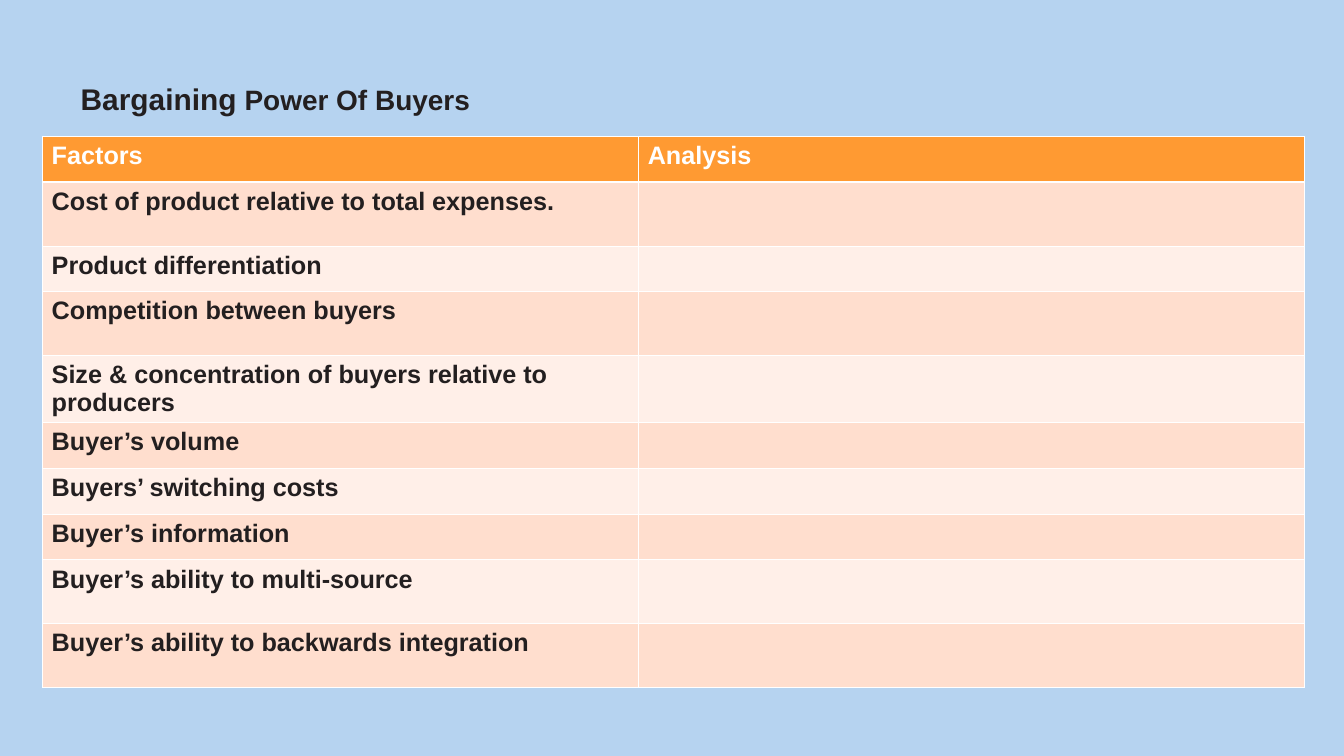
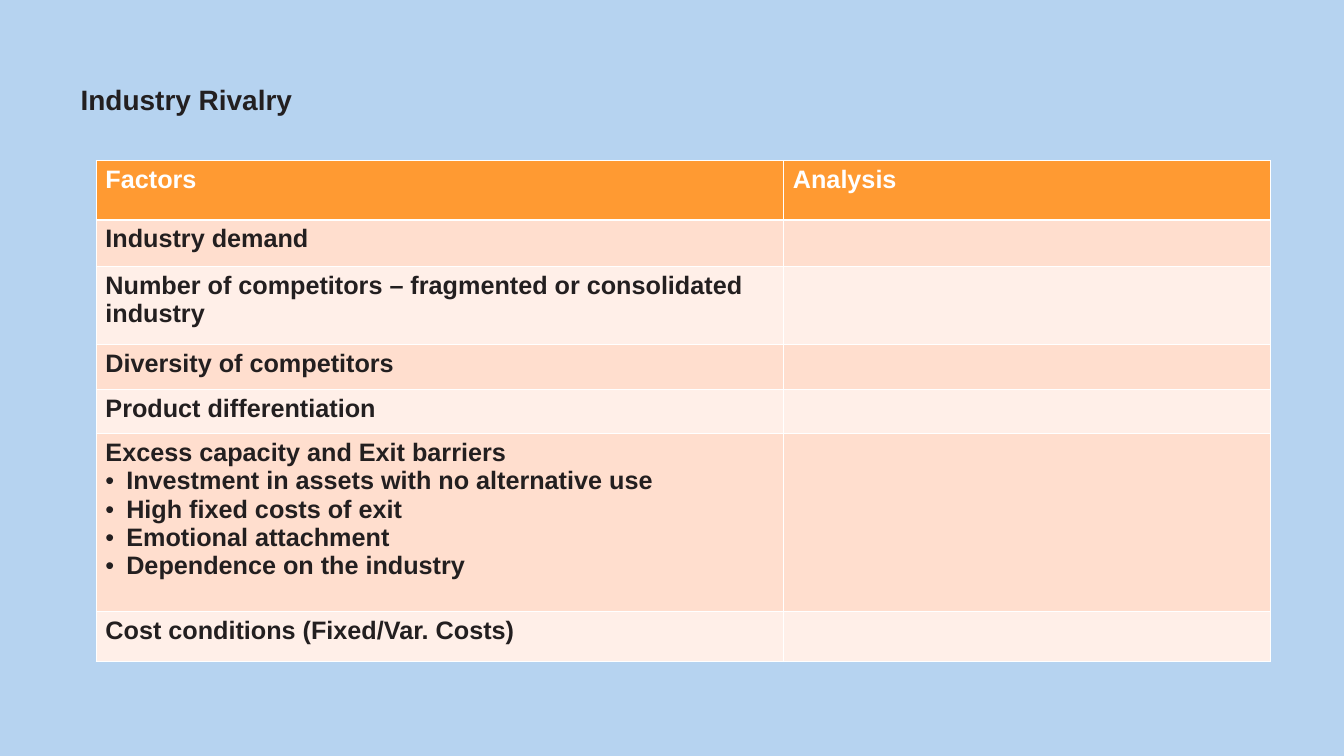
from dataclasses import dataclass

from lxml import etree
from pptx import Presentation
from pptx.dml.color import RGBColor
from pptx.enum.text import MSO_ANCHOR, MSO_AUTO_SIZE, PP_ALIGN
from pptx.oxml.ns import qn
from pptx.util import Inches, Pt

LEFT = PP_ALIGN.LEFT
BOTTOM = MSO_ANCHOR.BOTTOM
NO_AUTOFIT = MSO_AUTO_SIZE.NONE

FONT = "Arial"
SKY = "B6D3F0"
INK = "231F20"
WHITE = "FFFFFF"
ORANGE = "FF9A32"
BANDS = ("FFDECE", "FFEFE8")
TITLE_SIZE = 30
TABLE_SIZE = 27
THIN, THICK = 1, 3
BULLET_INDENT = Inches(0.31)


@dataclass(frozen=True)
class TitlePart:
    text: str
    size: float = TITLE_SIZE


@dataclass(frozen=True)
class FactorRow:
    factor: str
    height: float
    bullets: tuple[str, ...] = ()


@dataclass(frozen=True)
class FactorSlide:
    title: tuple[TitlePart, ...]
    left: float
    top: float
    column_widths: tuple[float, float]
    header_height: float
    rows: tuple[FactorRow, ...]


SLIDES = (
    FactorSlide(
        (TitlePart("Bargaining", 32), TitlePart(" Power Of Buyers")),
        0.63, 2.03, (8.87, 9.91), 0.68,
        (
            FactorRow("Cost of product relative to total expenses.", 0.95),
            FactorRow("Product differentiation", 0.68),
            FactorRow("Competition between buyers", 0.95),
            FactorRow("Size & concentration of buyers relative to producers", 0.83),
            FactorRow("Buyer’s volume", 0.68),
            FactorRow("Buyers’ switching costs", 0.68),
            FactorRow("Buyer’s information", 0.68),
            FactorRow("Buyer’s ability to multi-source", 0.95),
            FactorRow("Buyer’s ability to backwards integration", 0.95),
        ),
    ),
    FactorSlide(
        (TitlePart("Industry Rivalry"),),
        1.43, 2.39, (10.23, 7.25), 0.88,
        (
            FactorRow("Industry demand", 0.69),
            FactorRow("Number of competitors – fragmented or consolidated industry", 1.16),
            FactorRow("Diversity of competitors", 0.67),
            FactorRow("Product differentiation", 0.66),
            FactorRow(
                "Excess capacity and Exit barriers", 2.65,
                (
                    "Investment in assets with no alternative use",
                    "High fixed costs of exit",
                    "Emotional attachment",
                    "Dependence on the industry",
                ),
            ),
            FactorRow("Cost conditions (Fixed/Var. Costs)", 0.75),
        ),
    ),
)


def rgb(color: str) -> RGBColor:
    return RGBColor.from_string(color)


def set_font(font, color: str) -> None:
    font.name = FONT
    font.bold = True
    font.color.rgb = rgb(color)


def add_bullet(paragraph) -> None:
    properties = paragraph._p.get_or_add_pPr()
    properties.set("marL", str(BULLET_INDENT))
    properties.set("indent", str(-BULLET_INDENT))
    etree.SubElement(properties, qn("a:buFont")).set("typeface", FONT)
    etree.SubElement(properties, qn("a:buChar")).set("char", "•")


def set_borders(cell, top: float, bottom: float) -> None:
    properties = cell._tc.get_or_add_tcPr()
    widths = {"a:lnL": THIN, "a:lnR": THIN, "a:lnT": top, "a:lnB": bottom}
    for position, (tag, width) in enumerate(widths.items()):
        line = etree.Element(qn(tag), w=str(Pt(width)))
        fill = etree.SubElement(line, qn("a:solidFill"))
        etree.SubElement(fill, qn("a:srgbClr")).set("val", WHITE)
        properties.insert(position, line)


def fill_cell(cell, lines: tuple[str, ...], fill: str, color: str) -> None:
    cell.fill.solid()
    cell.fill.fore_color.rgb = rgb(fill)
    cell.margin_left = cell.margin_right = Inches(0.14)
    cell.margin_top = cell.margin_bottom = Inches(0.08)
    frame = cell.text_frame
    for index, text in enumerate(lines):
        paragraph = frame.add_paragraph() if index else frame.paragraphs[0]
        paragraph.text = text
        if index:
            add_bullet(paragraph)
        set_font(paragraph.font, color)
        paragraph.font.size = Pt(TABLE_SIZE)


def add_title(slide, parts: tuple[TitlePart, ...]) -> None:
    title = slide.shapes.title
    title.left, title.top = Inches(1.1), Inches(1.17)
    title.width, title.height = Inches(17.81), Inches(0.62)
    frame = title.text_frame
    frame.auto_size = NO_AUTOFIT
    frame.vertical_anchor = BOTTOM
    paragraph = frame.paragraphs[0]
    paragraph.alignment = LEFT
    paragraph.line_spacing = 0.9
    set_font(paragraph.font, INK)
    for part in parts:
        run = paragraph.add_run()
        run.text = part.text
        run.font.size = Pt(part.size)


def add_factor_table(slide, content: FactorSlide) -> None:
    heights = [content.header_height] + [row.height for row in content.rows]
    table = slide.shapes.add_table(
        len(heights), len(content.column_widths),
        Inches(content.left), Inches(content.top),
        Inches(sum(content.column_widths)), Inches(sum(heights)),
    ).table
    for column, width in zip(table.columns, content.column_widths):
        column.width = Inches(width)
    for row, height in zip(table.rows, heights):
        row.height = Inches(height)

    for cell, heading in zip(table.rows[0].cells, ("Factors", "Analysis")):
        fill_cell(cell, (heading,), ORANGE, WHITE)
        set_borders(cell, THIN, THICK)
    for index, row in enumerate(content.rows):
        factor, analysis = table.rows[index + 1].cells
        band = BANDS[index % len(BANDS)]
        fill_cell(factor, (row.factor, *row.bullets), band, INK)
        fill_cell(analysis, ("",), band, INK)
        for cell in (factor, analysis):
            set_borders(cell, THIN if index else THICK, THIN)


def add_factor_slide(presentation, content: FactorSlide) -> None:
    slide = presentation.slides.add_slide(presentation.slide_layouts[0])
    subtitle = slide.placeholders[1].element
    subtitle.getparent().remove(subtitle)
    add_title(slide, content.title)
    add_factor_table(slide, content)


def main() -> None:
    presentation = Presentation()
    presentation.slide_width = Inches(20)
    presentation.slide_height = Inches(11.25)
    background = presentation.slide_master.background.fill
    background.solid()
    background.fore_color.rgb = rgb(SKY)
    for content in SLIDES:
        add_factor_slide(presentation, content)
    presentation.save("out.pptx")


if __name__ == "__main__":
    main()
